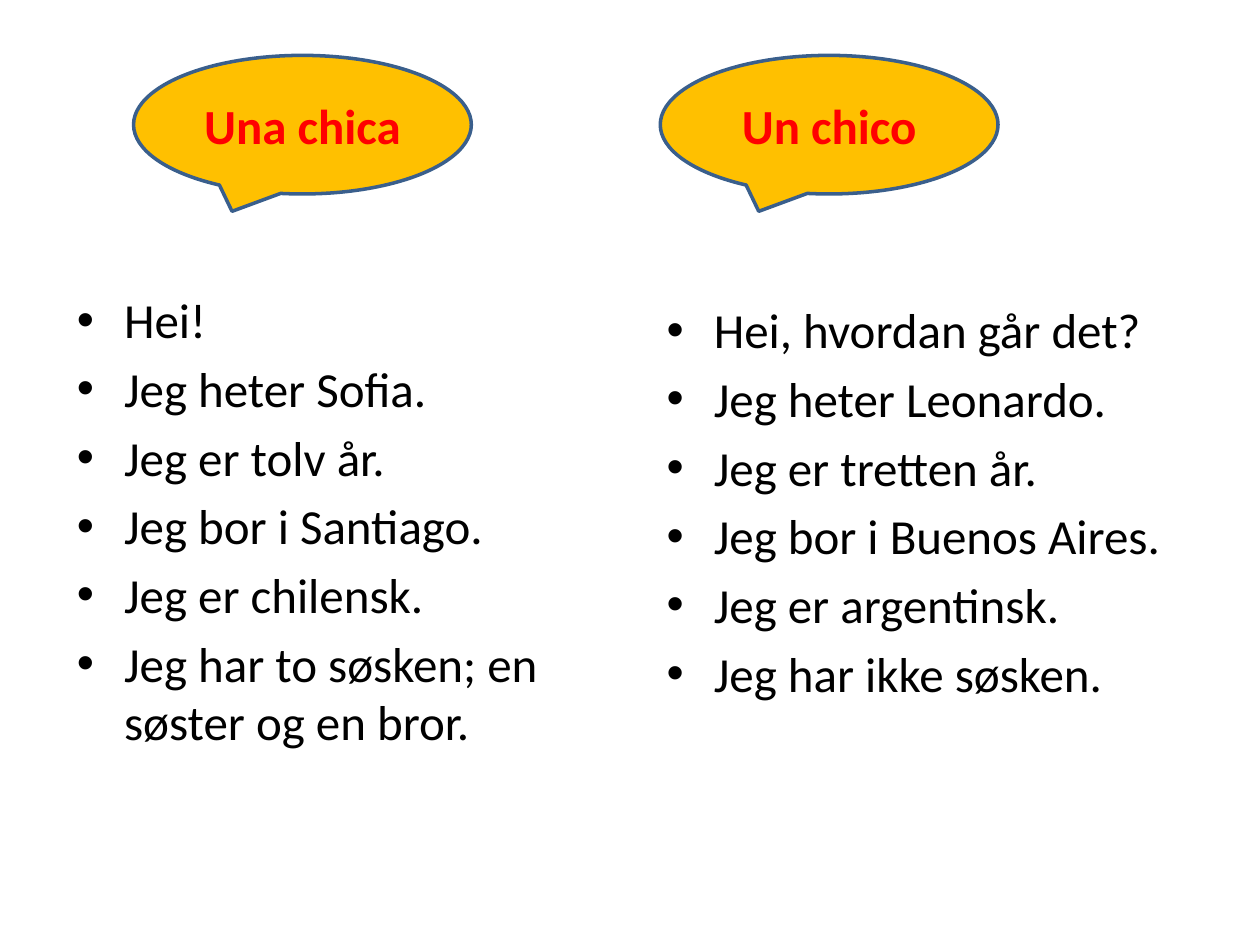
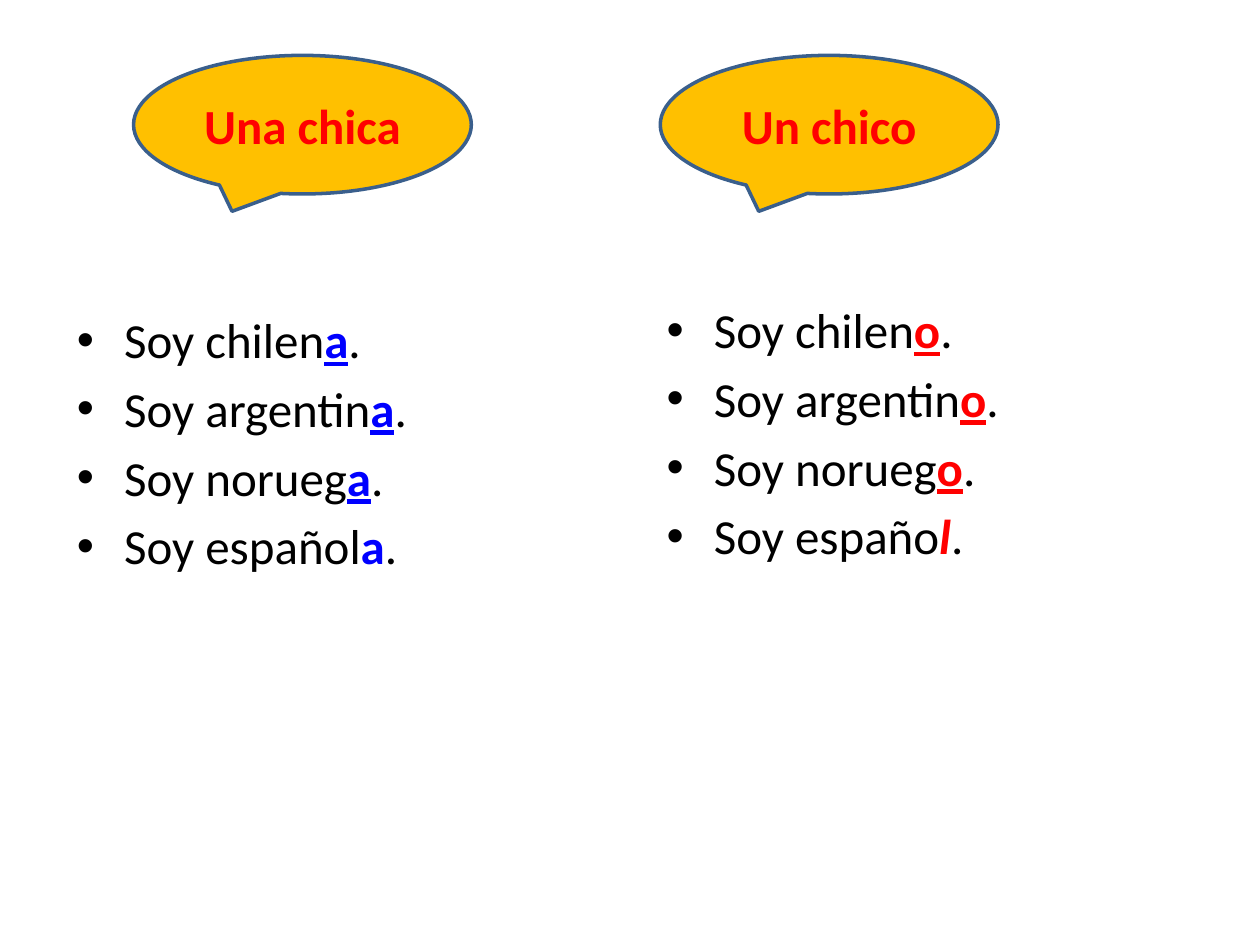
from dataclasses import dataclass

from pptx import Presentation
from pptx.dml.color import RGBColor as RGB
from pptx.enum.shapes import MSO_SHAPE as Shape
from pptx.enum.text import MSO_ANCHOR as Anchor, PP_ALIGN as Align
from pptx.util import Pt


@dataclass(frozen=True)
class Theme:
    """Colours and type sizes of the deck."""
    font: str = "Calibri"
    size: int = 28
    text: RGB = RGB(0x00, 0x00, 0x00)
    feminine: RGB = RGB(0x00, 0x00, 0xFF)
    masculine: RGB = RGB(0xFF, 0x00, 0x00)
    heading: RGB = RGB(0xFF, 0x00, 0x00)
    bubble: RGB = RGB(0xFF, 0xC0, 0x00)
    outline: RGB = RGB(0x3A, 0x5F, 0x8C)
    outline_width: int = 2


THEME = Theme()
TWO_CONTENT = 3
BUBBLES = (("Una chica", (76.3, 31.7, 193, 79.2)),
           ("Un chico", (377.3, 31.7, 193, 79.2)))
CHICO_BOX = (373.7, 167.8, 318, 356.4)

SOFIA = ("Hei!", "Jeg heter Sofia.", "Jeg er tolv år.", "Jeg bor i Santiago.",
         "Jeg er chilensk.", "Jeg har to søsken; en søster og en bror.")
LEONARDO = ("Hei, hvordan går det?", "Jeg heter Leonardo.", "Jeg er tretten år.",
            "Jeg bor i Buenos Aires.", "Jeg er argentinsk.", "Jeg har ikke søsken.")
STEMS = ("Soy chilen", "Soy argentin", "Soy norueg")


def place(sp, box):
    """Move a shape to a box given in points."""
    sp.left, sp.top, sp.width, sp.height = map(Pt, box)


def style(r, color, bold=None, underline=None, italic=None):
    """Format one run in the deck's font."""
    f = r.font
    f.name, f.size = THEME.font, Pt(THEME.size)
    f.color.rgb = color
    f.bold, f.underline, f.italic = bold, underline, italic


def add_bubble(slide, text, box):
    """Draw a speech bubble with a heading."""
    sp = slide.shapes.add_shape(Shape.OVAL_CALLOUT, *map(Pt, box))
    sp.shadow.inherit = False
    sp.fill.solid()
    sp.fill.fore_color.rgb = THEME.bubble
    sp.line.color.rgb = THEME.outline
    sp.line.width = Pt(THEME.outline_width)
    tf = sp.text_frame
    tf.text = text
    tf.vertical_anchor = Anchor.MIDDLE
    p = tf.paragraphs[0]
    p.alignment = Align.CENTER
    style(p.runs[0], THEME.heading, bold=True)


def fill_list(sp, lines, box):
    """Fill a body placeholder with lines, each a list of (text, format) runs."""
    place(sp, box)
    tf = sp.text_frame
    for i, line in enumerate(lines):
        p = tf.add_paragraph() if i else tf.paragraphs[0]
        for text, look in line:
            r = p.add_run()
            r.text = text
            style(r, **look)


def plain(text):
    """Return a run in the normal text colour."""
    return text, {"color": THEME.text}


def sentence(stem, ending, color, **marks):
    """Return the runs of a sentence whose ending stands out."""
    return [plain(stem), (ending, {"color": color, "bold": True, **marks}), plain(".")]


def add_pair_slide(prs, chica, chico, chica_box):
    """Add a slide with a girl's list beside a boy's list."""
    slide = prs.slides.add_slide(prs.slide_layouts[TWO_CONTENT])
    title, left, right = slide.placeholders
    title.element.getparent().remove(title.element)
    fill_list(left, chica, chica_box)
    fill_list(right, chico, CHICO_BOX)
    for text, box in BUBBLES:
        add_bubble(slide, text, box)


def main():
    """Build and save the deck."""
    prs = Presentation()
    prs.slide_width, prs.slide_height = Pt(720), Pt(540)

    add_pair_slide(prs, [[plain(t)] for t in SOFIA], [[plain(t)] for t in LEONARDO],
                   (36.7, 162, 318, 356.4))

    chica = [sentence(s, "a", THEME.feminine, underline=True) for s in STEMS]
    chica.append(sentence("Soy español", "a", THEME.feminine))
    chico = [sentence(s, "o", THEME.masculine, underline=True) for s in STEMS]
    chico.append(sentence("Soy españo", "l", THEME.masculine, italic=True))
    add_pair_slide(prs, chica, chico, (36.7, 173.5, 306, 356.4))

    prs.save("out.pptx")


if __name__ == "__main__":
    main()
